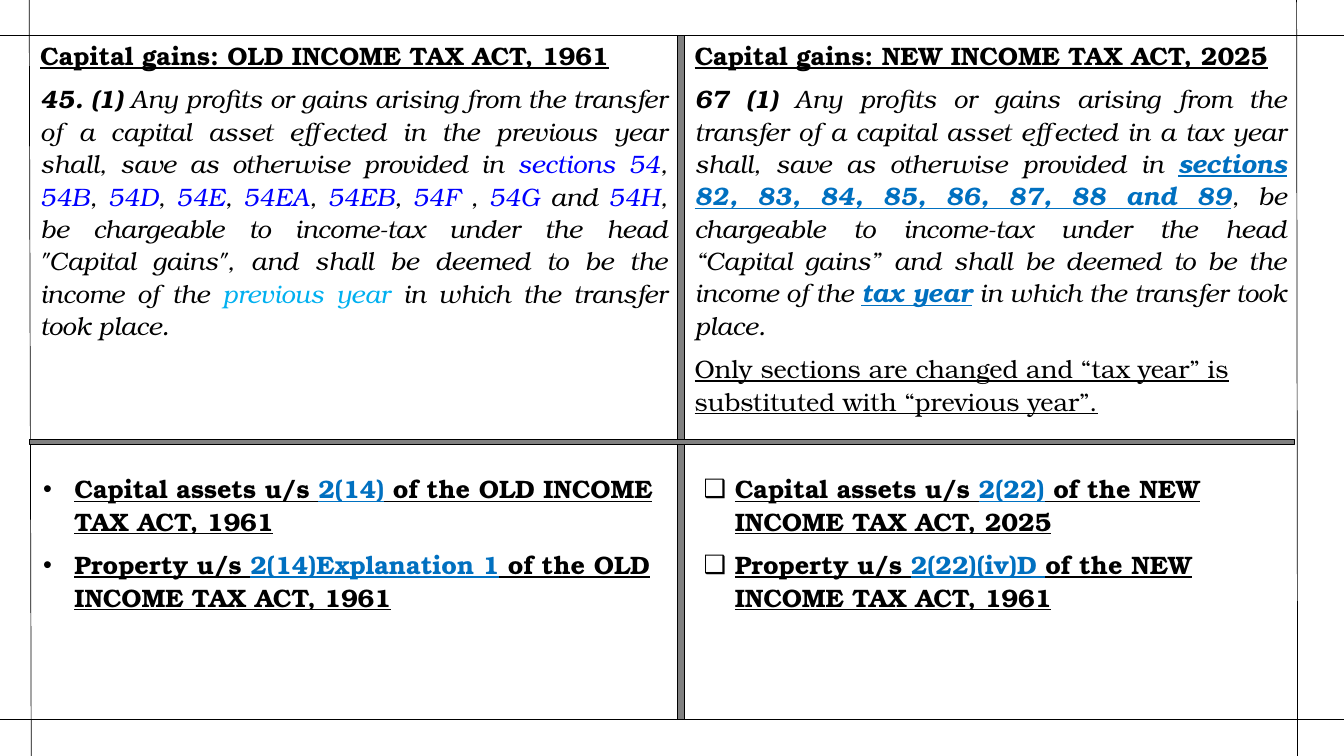
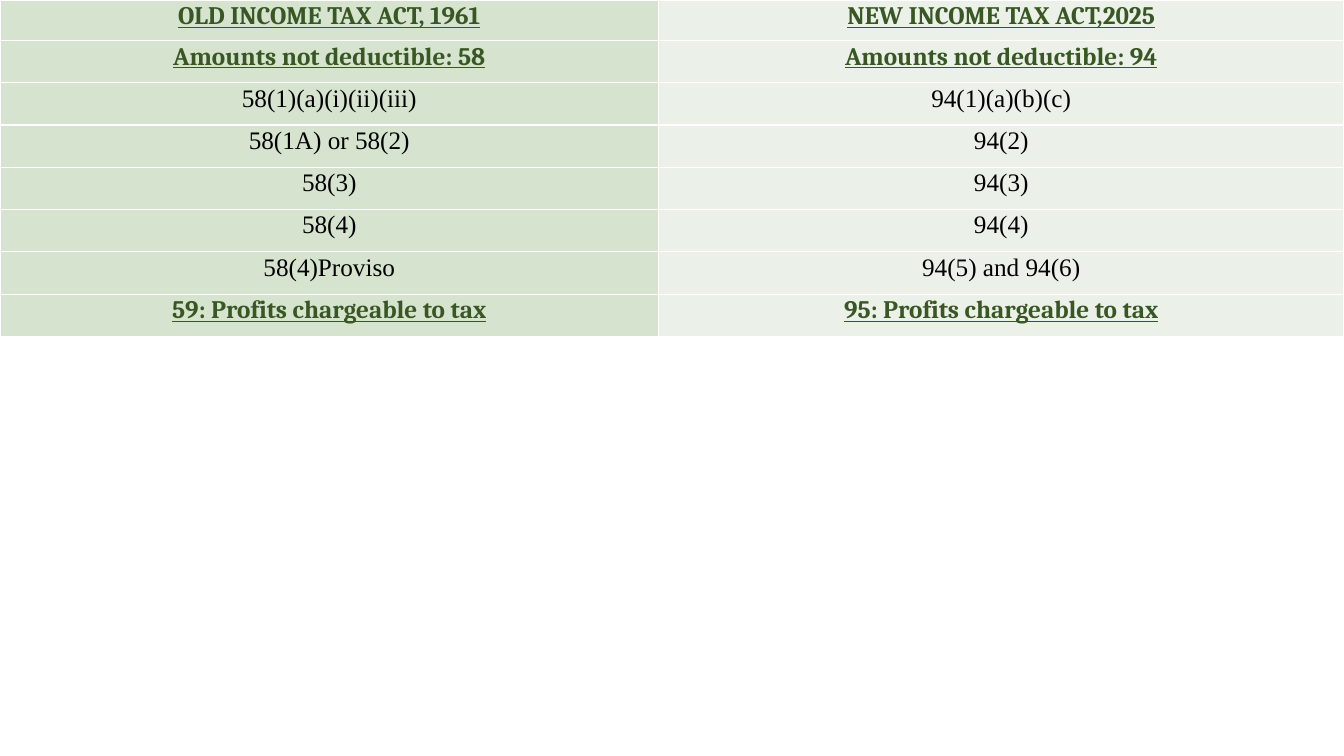
from lxml.etree import SubElement
from pptx import Presentation
from pptx.dml.color import RGBColor
from pptx.enum.shapes import MSO_CONNECTOR, MSO_SHAPE
from pptx.enum.text import PP_ALIGN
from pptx.oxml.ns import qn
from pptx.util import Emu, Inches, Pt

BLACK = RGBColor(0x00, 0x00, 0x00)
GREY = RGBColor(0x80, 0x80, 0x80)
LINK = RGBColor(0x00, 0x00, 0xFF)
SKY = RGBColor(0x00, 0xB0, 0xF0)
BLUE = RGBColor(0x00, 0x70, 0xC0)
GREEN = RGBColor(0x38, 0x57, 0x23)
OLD_FILL = RGBColor(0xD5, 0xE3, 0xCF)
NEW_FILL = RGBColor(0xEB, 0xF1, 0xE9)

BODY_FONT = "TeX Gyre Bonum"
HEAD_FONT = "Cambria"
CELL_FONT = "Times New Roman"
SIZE = 18
SPACING = 1.07
WIDTH, HEIGHT = 13.33, 7.5
FRAME = (0.29, 0.35, 12.57, 6.79)

HEADING = dict(bold=True, underline=True)
ITALIC = dict(italic=True)
SECTION = dict(italic=True, color=LINK)
CHANGED = dict(italic=True, bold=True, underline=True, color=BLUE)
REFERENCE = dict(HEADING, color=BLUE)

OLD_SECTIONS = [("sections 54", ", "), ("54B", ", "), ("54D", ", "), ("54E", ", "),
                ("54EA", ", "), ("54EB", ", "), ("54F", " , "), ("54G", " and ")]
OLD_CLAUSE = [
    ("45. (1)", dict(ITALIC, bold=True)),
    (" Any profits or gains arising from the transfer of a capital asset effected in "
     "the previous year shall, save as otherwise provided in ", ITALIC),
    *[run for number, mark in OLD_SECTIONS for run in ((number, SECTION), (mark, ITALIC))],
    ("54H", SECTION),
    (', be chargeable to income-tax under the head "Capital gains", and shall be deemed '
     "to be the income of the ", ITALIC),
    ("previous year", dict(ITALIC, color=SKY)),
    (" in which the transfer took place.", ITALIC),
]
NEW_CLAUSE = [
    ("67 (1)", dict(ITALIC, bold=True)),
    (" Any profits or gains arising from the transfer of a capital asset effected in "
     "a tax year shall, save as otherwise provided in ", ITALIC),
    ("sections 82, 83, 84, 85, 86, 87, 88 and 89", CHANGED),
    (", be chargeable to income-tax under the head “Capital gains” and shall be deemed "
     "to be the income of the ", ITALIC),
    ("tax year", CHANGED),
    (" in which the transfer took place.", ITALIC),
]
NEW_NOTE = "Only sections are changed and “tax year” is substituted with “previous year”."
OLD_DEFINITIONS = [
    ("Capital assets u/s ", "2(14)", " of the OLD INCOME TAX ACT, 1961"),
    ("Property u/s ", "2(14)Explanation 1", " of the OLD INCOME TAX ACT, 1961"),
]
NEW_DEFINITIONS = [
    ("Capital assets u/s ", "2(22)", " of the NEW INCOME TAX ACT, 2025"),
    ("Property u/s ", "2(22)(iv)D ", "of the NEW INCOME TAX ACT, 1961"),
]
SECTION_ROWS = [
    ("OLD INCOME TAX ACT, 1961", "NEW INCOME TAX ACT,2025"),
    ("Amounts not deductible: 58", "Amounts not deductible: 94"),
    ("58(1)(a)(i)(ii)(iii)", "94(1)(a)(b)(c)"),
    ("58(1A) or 58(2)", "94(2)"),
    ("58(3)", "94(3)"),
    ("58(4)", "94(4)"),
    ("58(4)Proviso", "94(5) and 94(6)"),
    ("59: Profits chargeable to tax", "95: Profits chargeable to tax"),
]
HEADING_ROWS = {0, 1, len(SECTION_ROWS) - 1}


def add_run(p, text, font=BODY_FONT, size=SIZE, color=BLACK, bold=False, italic=False,
            underline=False):
    """Append one formatted run to a paragraph."""
    r = p.add_run()
    r.text = text
    f = r.font
    f.name, f.size, f.bold, f.italic, f.underline = font, Pt(size), bold, italic, underline
    f.color.rgb = color


def add_bullet(p, char, indent=0.31):
    """Give a paragraph a hanging bullet."""
    pPr = p._p.get_or_add_pPr()
    pPr.set("marL", str(Inches(indent)))
    pPr.set("indent", str(-Inches(indent)))
    SubElement(pPr, qn("a:buFont"), typeface="Arial")
    SubElement(pPr, qn("a:buChar"), char=char)


def add_text(s, box, paragraphs, bullet=None):
    """Place a text box of (runs, alignment, line spacing) paragraphs."""
    tf = s.shapes.add_textbox(*map(Inches, box)).text_frame
    tf.word_wrap = True
    for i, (runs, align, spacing) in enumerate(paragraphs):
        p = tf.add_paragraph() if i else tf.paragraphs[0]
        if bullet:
            add_bullet(p, bullet)
        p.alignment, p.line_spacing, p.space_after = align, spacing, Pt(8)
        for text, style in runs:
            add_run(p, text, **style)


def add_rule(s, x1, y1, x2, y2):
    """Draw one thin page rule."""
    c = s.shapes.add_connector(MSO_CONNECTOR.STRAIGHT, *map(Inches, (x1, y1, x2, y2)))
    c.line.color.rgb = BLACK
    c.line.width = Pt(0.5)
    SubElement(c._element.spPr, qn("a:effectLst"))


def add_bar(s, box):
    """Draw one grey dividing bar."""
    sp = s.shapes.add_shape(MSO_SHAPE.RECTANGLE, *map(Inches, box))
    sp.shadow.inherit = False
    sp.fill.solid()
    sp.fill.fore_color.rgb = GREY
    sp.line.color.rgb = BLACK
    sp.line.width = Pt(1)


def add_page_rules(s, box):
    """Run the four page rules along the edges of the box."""
    x, y, w, h = box
    add_rule(s, x, 0, x + 0.02, HEIGHT)
    add_rule(s, x + w, 0, x + w + 0.01, HEIGHT)
    for edge in (y, y + h):
        add_rule(s, 0, edge, WIDTH, edge)


def add_clause(s, box, heading, clause, note=None):
    """Set a heading, a justified clause and an optional note in the box."""
    paragraphs = [([(heading, HEADING)], PP_ALIGN.LEFT, 1.0),
                  (clause, PP_ALIGN.JUSTIFY, SPACING)]
    if note:
        paragraphs.append(([(note, dict(underline=True))], PP_ALIGN.LEFT, SPACING))
    add_text(s, box, paragraphs)


def add_definitions(s, box, items, bullet):
    """Set bulleted definitions with a coloured section reference in the box."""
    styles = (HEADING, REFERENCE, HEADING)
    add_text(s, box, [(list(zip(item, styles)), PP_ALIGN.LEFT, SPACING) for item in items],
             bullet)


def quadrant_slide(prs, box):
    """Build the four-quadrant comparison of the two acts."""
    s = prs.slides.add_slide(prs.slide_layouts[6])
    x, y, w, h = box
    add_page_rules(s, box)
    add_bar(s, (x + 6.43, y, 0.07, h))
    add_clause(s, (x + 0.01, y, 6.42, 3.11),
               "Capital gains: OLD INCOME TAX ACT, 1961", OLD_CLAUSE)
    add_clause(s, (x + 6.5, y, 6.07, 3.87),
               "Capital gains: NEW INCOME TAX ACT, 2025", NEW_CLAUSE, NEW_NOTE)
    lower = y + 4.28
    add_definitions(s, (x + 0.04, lower, 6.42, 1.51), OLD_DEFINITIONS, "•")
    add_definitions(s, (x + 6.59, lower, 5.99, 1.51), NEW_DEFINITIONS, "❑")
    add_bar(s, (x, y + 4.01, w - 0.02, 0.05))


def add_borders(cell):
    """Give a table cell thin white borders."""
    tcPr = cell._tc.get_or_add_tcPr()
    for side in ("lnL", "lnR", "lnT", "lnB"):
        ln = SubElement(tcPr, qn(f"a:{side}"), w=str(Pt(1)))
        fill = SubElement(ln, qn("a:solidFill"))
        SubElement(fill, qn("a:srgbClr"), val="FFFFFF")


def format_cell(cell, text, fill, is_heading):
    """Fill and letter one table cell."""
    add_borders(cell)
    cell.fill.solid()
    cell.fill.fore_color.rgb = fill
    cell.margin_left = cell.margin_right = Inches(0.07)
    cell.margin_top = cell.margin_bottom = Emu(0)
    p = cell.text_frame.paragraphs[0]
    p.alignment, p.line_spacing = PP_ALIGN.CENTER, SPACING
    style = dict(HEADING, font=HEAD_FONT, color=GREEN) if is_heading else dict(font=CELL_FONT)
    add_run(p, text, **style)


def table_slide(prs, box):
    """Build the table that matches old sections to new ones."""
    s = prs.slides.add_slide(prs.slide_layouts[6])
    table = s.shapes.add_table(len(SECTION_ROWS), 2, *map(Inches, box)).table
    table.first_row = table.horz_banding = False
    for column, share in zip(table.columns, (0.49, 0.51)):
        column.width = Inches(box[2] * share)
    for i, texts in enumerate(SECTION_ROWS):
        table.rows[i].height = Inches(0.42 if i else 0.4)
        for j, (text, fill) in enumerate(zip(texts, (OLD_FILL, NEW_FILL))):
            format_cell(table.cell(i, j), text, fill, i in HEADING_ROWS)


def main():
    """Build and save the presentation."""
    prs = Presentation()
    prs.slide_width, prs.slide_height = Inches(WIDTH), Inches(HEIGHT)
    quadrant_slide(prs, FRAME)
    table_slide(prs, (0, 0, WIDTH, 3.34))
    prs.save("out.pptx")


if __name__ == "__main__":
    main()
